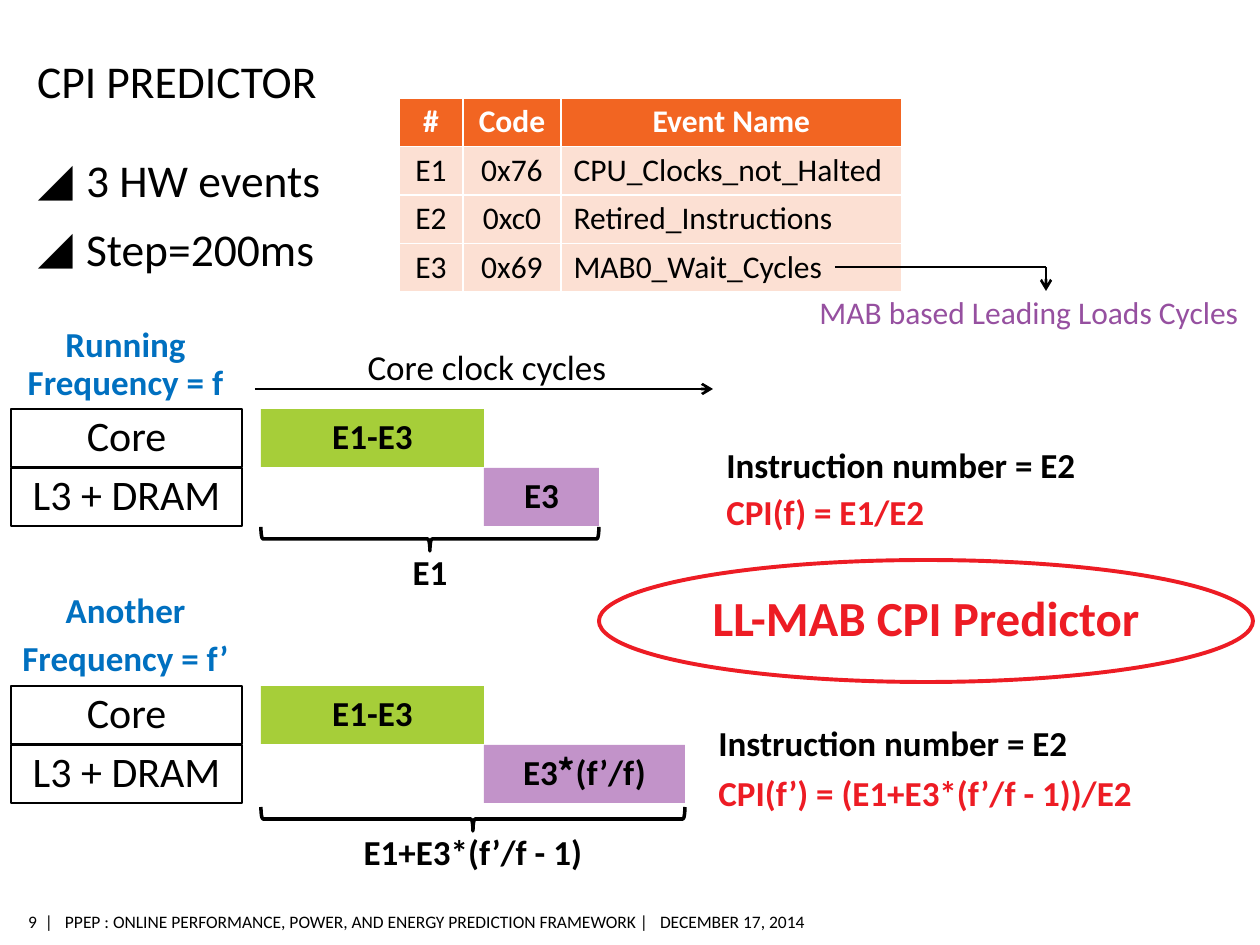
from dataclasses import dataclass

from lxml.etree import SubElement
from pptx import Presentation
from pptx.dml.color import RGBColor
from pptx.enum.shapes import MSO_CONNECTOR, MSO_SHAPE
from pptx.enum.text import MSO_ANCHOR, MSO_AUTO_SIZE, PP_ALIGN
from pptx.oxml.ns import qn
from pptx.util import Emu, Pt

EMU_PER_PX = 914400 / 126


@dataclass(frozen=True)
class Theme:
    font: str = "Calibri"
    symbol_font: str = "Noto Sans CJK SC"
    black: str = "000000"
    white: str = "FFFFFF"
    red: str = "ED1C24"
    blue: str = "0070C0"
    purple: str = "9650A0"
    core_bar: str = "A6CE39"
    memory_bar: str = "C293C9"
    table_head: str = "F26522"
    table_body: str = "FCE0D3"
    title: int = 26
    callout: int = 28
    unit: int = 24
    label: int = 20
    table: int = 18
    footer: int = 10


THEME = Theme()


def px(value):
    return Emu(round(value * EMU_PER_PX))


def frame(left, top, width, height):
    return px(left), px(top), px(width), px(height)


def format_text(text_frame, size, color=THEME.black, bold=False, align=PP_ALIGN.CENTER):
    for paragraph in text_frame.paragraphs:
        paragraph.alignment = align
        for run in paragraph.runs:
            run.font.name = THEME.font
            run.font.size = Pt(size)
            run.font.bold = bold
            run.font.color.rgb = RGBColor.from_string(color)


def write_label(shape, text, size, color=THEME.black, bold=False, align=PP_ALIGN.CENTER):
    text_frame = shape.text_frame
    text_frame.word_wrap = True
    text_frame.vertical_anchor = MSO_ANCHOR.MIDDLE
    text_frame.text = text
    for index, paragraph in enumerate(text_frame.paragraphs):
        paragraph.line_spacing = 0.9
        paragraph.space_before = Pt(6 if index else 0)
    format_text(text_frame, size, color, bold, align)


def add_label(slide, box, text, size=THEME.label, color=THEME.black, bold=True,
              align=PP_ALIGN.CENTER):
    shape = slide.shapes.add_textbox(*frame(*box))
    write_label(shape, text, size, color, bold, align)
    return shape


def add_outline(slide, preset, box, fill=None, line=None, line_width=1.5):
    shape = slide.shapes.add_shape(preset, *frame(*box))
    shape.shadow.inherit = False
    if fill:
        shape.fill.solid()
        shape.fill.fore_color.rgb = RGBColor.from_string(fill)
    else:
        shape.fill.background()
    if line:
        shape.line.color.rgb = RGBColor.from_string(line)
        shape.line.width = Pt(line_width)
    else:
        shape.line.fill.background()
    return shape


def add_brace(slide, left, top, width, height):
    # A left brace is mirrored and turned so that its tip points down
    upright = (left + (width - height) / 2, top + (height - width) / 2, height, width)
    brace = add_outline(slide, MSO_SHAPE.LEFT_BRACE, upright, line=THEME.black, line_width=2)
    brace.rotation = 90
    brace._element.spPr.find(qn("a:xfrm")).set("flipH", "1")


def add_line(slide, start, end, arrow=False):
    line = slide.shapes.add_connector(MSO_CONNECTOR.STRAIGHT,
                                      *(px(value) for value in (*start, *end)))
    line.line.color.rgb = RGBColor.from_string(THEME.black)
    line.line.width = Pt(1.5)
    if arrow:
        SubElement(line.line._get_or_add_ln(), qn("a:tailEnd"), type="arrow")
    SubElement(line._element.spPr, qn("a:effectLst"))


def place_placeholder(shape, box, text, anchor, bottom_inset):
    shape.left, shape.top, shape.width, shape.height = frame(*box)
    text_frame = shape.text_frame
    text_frame.auto_size = MSO_AUTO_SIZE.NONE
    text_frame.vertical_anchor = anchor
    text_frame.margin_left = text_frame.margin_right = 0
    text_frame.margin_top, text_frame.margin_bottom = px(6), px(bottom_inset)
    text_frame.text = text
    return text_frame


def add_heading(slide):
    title = place_placeholder(slide.shapes.title, (37, 43, 1058, 65), "CPI PREDICTOR",
                              MSO_ANCHOR.BOTTOM, 0)
    format_text(title, THEME.title, align=PP_ALIGN.LEFT)

    body = place_placeholder(slide.placeholders[1], (38, 146, 1184, 680),
                             "3 HW events\nStep=200ms", MSO_ANCHOR.TOP, 6)
    for index, paragraph in enumerate(body.paragraphs):
        paragraph.space_before = Pt(8 if index else 0)
        properties = paragraph._p.get_or_add_pPr()
        properties.set("marL", str(px(48)))
        properties.set("indent", str(px(-48)))
        bullet_color = SubElement(properties, qn("a:buClr"))
        SubElement(bullet_color, qn("a:srgbClr"), val=THEME.black)
        SubElement(properties, qn("a:buChar"), char="◢")
    format_text(body, THEME.title, align=PP_ALIGN.LEFT)


def add_event_table(slide):
    rows = [("#", "Code", "Event Name"),
            ("E1", "0x76", "CPU_Clocks_not_Halted"),
            ("E2", "0xc0", "Retired_Instructions"),
            ("E3", "0x69", "MAB0_Wait_Cycles")]
    widths = (64, 98, 341)
    table = slide.shapes.add_table(len(rows), len(widths),
                                   *frame(399, 98, sum(widths), 48 * len(rows))).table
    for column, width in zip(table.columns, widths):
        column.width = px(width)
    for row_index, row in enumerate(rows):
        head = row_index == 0
        for column_index, text in enumerate(row):
            cell = table.cell(row_index, column_index)
            cell.fill.solid()
            cell.fill.fore_color.rgb = RGBColor.from_string(
                THEME.table_head if head else THEME.table_body)
            cell.margin_top = cell.margin_bottom = px(5)
            cell.text = text
            centred = head or column_index < 2
            format_text(cell.text_frame, THEME.table, THEME.white if head else THEME.black,
                        head, PP_ALIGN.CENTER if centred else PP_ALIGN.LEFT)


def add_timeline(slide, top, heading, heading_height, stall, stall_width, total, brace_top):
    add_label(slide, (4, top - heading_height, 243, heading_height), heading, color=THEME.blue)
    step = 59
    # Hardware units
    for index, unit in enumerate(("Core", "L3 + DRAM")):
        box = add_outline(slide, MSO_SHAPE.RECTANGLE, (11, top + index * step, 231, 58),
                          THEME.white, THEME.black)
        write_label(box, unit, THEME.unit)
    # Time spent in each unit
    start, core_width = 261, 223
    bars = [(start, top, core_width, THEME.core_bar, "E1-E3"),
            (start + core_width, top + step, stall_width, THEME.memory_bar, stall)]
    for left, bar_top, width, color, text in bars:
        bar = add_outline(slide, MSO_SHAPE.RECTANGLE, (left, bar_top, width, 58), color)
        write_label(bar, text, THEME.label, bold=True)
    # Total time
    full_width = core_width + stall_width
    add_brace(slide, start, brace_top, full_width, 24)
    add_label(slide, (start, brace_top + 22, full_width, 50), total)
    return bar


def add_scaled_stall(bar):
    paragraph = bar.text_frame.paragraphs[0]
    for text, font in (("*", THEME.symbol_font), ("(f’/f)", THEME.font)):
        run = paragraph.add_run()
        run.text = text
        run.font.name = font
        run.font.size = Pt(THEME.label)
        run.font.bold = True
        run.font.color.rgb = RGBColor.from_string(THEME.black)


def add_equations(slide, left, top, step, formula):
    lines = (("Instruction number = E2", THEME.black), (formula, THEME.red))
    for index, (text, color) in enumerate(lines):
        add_label(slide, (left, top + index * step, 481, 50), text, color=color,
                  align=PP_ALIGN.LEFT)


def add_footer(slide):
    number = add_label(slide, (16, 905, 21, 33), "9", THEME.footer, bold=False,
                       align=PP_ALIGN.RIGHT)
    note = add_label(
        slide, (45, 905, 800, 33),
        "|\tPPEP : ONLINE PERFORMANCE, POWER, AND ENERGY PREDICTION FRAMEWORK |"
        "\tDECEMBER 17, 2014", THEME.footer, bold=False, align=PP_ALIGN.LEFT)
    for shape in (number, note):
        shape.text_frame.margin_left = shape.text_frame.margin_right = 0
        shape.text_frame.paragraphs[0].line_spacing = 1.0
    tabs = SubElement(note.text_frame.paragraphs[0]._p.get_or_add_pPr(), qn("a:tabLst"))
    for position in (20, 615):
        SubElement(tabs, qn("a:tab"), pos=str(px(position)), algn="l")


def main():
    presentation = Presentation()
    presentation.slide_width, presentation.slide_height = px(1260), px(945)
    slide = presentation.slides.add_slide(presentation.slide_layouts[1])
    add_heading(slide)

    # Event table and its remark
    add_event_table(slide)
    add_line(slide, (835, 267), (1046, 267))
    add_line(slide, (1046, 267), (1046, 291), arrow=True)
    add_label(slide, (796, 291, 466, 47), "MAB based Leading Loads Cycles", THEME.table,
              THEME.purple, bold=False)

    # Running frequency
    add_label(slide, (260, 344, 454, 50), "Core clock cycles", bold=False)
    add_line(slide, (255, 389), (713, 389), arrow=True)
    add_timeline(slide, 409, "Running Frequency = f", 88, "E3", 115, "E1", 527)
    add_equations(slide, 714, 442, 47, "CPI(f) = E1/E2")

    # Another frequency
    stall_bar = add_timeline(slide, 686, "Another\nFrequency = f’", 99, "E3", 201,
                             "E1+E3*(f’/f - 1)", 807)
    add_scaled_stall(stall_bar)
    add_equations(slide, 706, 720, 50, "CPI(f’) = (E1+E3*(f’/f - 1))/E2")

    # Name of the predictor
    callout = add_outline(slide, MSO_SHAPE.OVAL, (599, 560, 654, 122), line=THEME.red,
                          line_width=2.25)
    write_label(callout, "LL-MAB CPI Predictor", THEME.callout, THEME.red, True)

    add_footer(slide)
    presentation.save("out.pptx")


if __name__ == "__main__":
    main()
